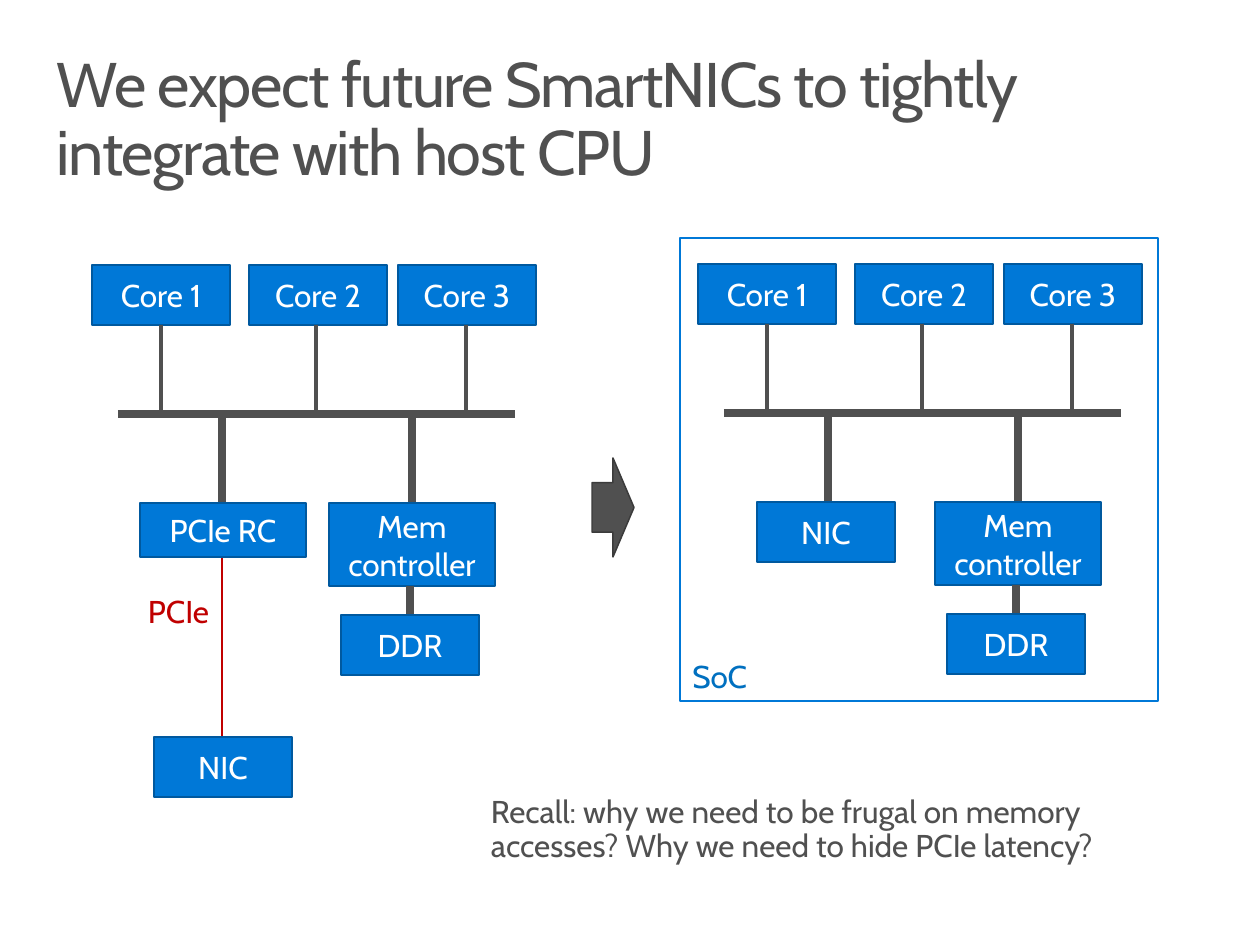
from pptx import Presentation
from pptx.dml.color import RGBColor
from pptx.enum.shapes import MSO_CONNECTOR, MSO_SHAPE
from pptx.enum.text import MSO_ANCHOR, PP_ALIGN
from pptx.oxml.ns import qn
from pptx.util import Emu, Pt

RECTANGLE = MSO_SHAPE.RECTANGLE
RIGHT_ARROW = MSO_SHAPE.RIGHT_ARROW
STRAIGHT = MSO_CONNECTOR.STRAIGHT
TOP, MIDDLE, BOTTOM = MSO_ANCHOR.TOP, MSO_ANCHOR.MIDDLE, MSO_ANCHOR.BOTTOM
LEFT, CENTER = PP_ALIGN.LEFT, PP_ALIGN.CENTER

EMU_PER_PX = 914400 / 126
FONT = "Cabin"
COLORS = {
    "gray": "505050",
    "dark gray": "3B3B3B",
    "blue": "0078D7",
    "dark blue": "00599F",
    "label blue": "0070C0",
    "red": "C00000",
    "white": "FFFFFF",
}

CORE_TOP = 265
BUS_Y = 414
CONTROLLER_TOP = 503
BLOCK_WIDTH, BLOCK_HEIGHT = 138, 60
CONTROLLER_WIDTH = 166
CORES = [("Core 1", 92, 161), ("Core 2", 249, 316), ("Core 3", 398, 466)]
THIN, THICK = 2.25, 4.5
SOC_SHIFT = (606, -1)


def px(length):
    return Emu(round(length * EMU_PER_PX))


def color(name):
    return RGBColor.from_string(COLORS[name])


def write(shape, text, color_name, size=18, align=LEFT, anchor=TOP):
    frame = shape.text_frame
    frame.word_wrap = True
    frame.vertical_anchor = anchor
    frame.text = text
    paragraph = frame.paragraphs[0]
    paragraph.alignment = align
    font = paragraph.runs[0].font
    font.name = FONT
    font.size = Pt(size)
    font.color.rgb = color(color_name)
    return paragraph


def add_text(slide, box, text, color_name, size=18, inset=(13, 6)):
    text_box = slide.shapes.add_textbox(*map(px, box))
    frame = text_box.text_frame
    frame.margin_left = frame.margin_right = px(inset[0])
    frame.margin_top = frame.margin_bottom = px(inset[1])
    return write(text_box, text, color_name, size)


def add_figure(slide, kind, box, fill, line):
    shape = slide.shapes.add_shape(kind, *map(px, box))
    shape.shadow.inherit = False
    if fill:
        shape.fill.solid()
        shape.fill.fore_color.rgb = color(fill)
    else:
        shape.fill.background()
    shape.line.color.rgb = color(line)
    shape.line.width = Pt(0.85)
    return shape


def add_block(slide, text, left, top, width=BLOCK_WIDTH, height=BLOCK_HEIGHT):
    block = add_figure(slide, RECTANGLE, (left, top, width, height), "blue", "dark blue")
    write(block, text, "white", align=CENTER, anchor=MIDDLE)


def add_line(slide, start, end, width, color_name="gray"):
    line = slide.shapes.add_connector(STRAIGHT, *map(px, start + end))
    line.line.color.rgb = color(color_name)
    line.line.width = Pt(width)
    properties = line._element.spPr
    properties.append(properties.makeelement(qn("a:effectLst"), {}))


def add_host(slide, shift_x=0, shift_y=0):
    """Draw the cores, bus and memory that both designs share."""
    def block(text, left, top, *size):
        add_block(slide, text, left + shift_x, top + shift_y, *size)

    def vertical(x, top, bottom, width):
        add_line(slide, (x + shift_x, top + shift_y), (x + shift_x, bottom + shift_y), width)

    for name, left, wire_x in CORES:
        block(name, left, CORE_TOP)
        vertical(wire_x, CORE_TOP + BLOCK_HEIGHT, BUS_Y, THIN)
    add_line(slide, (118 + shift_x, BUS_Y + shift_y), (515 + shift_x, BUS_Y + shift_y), THICK)
    for wire_x in (222, 412):
        vertical(wire_x, BUS_Y, CONTROLLER_TOP, THICK)
    block("Mem controller", 329, CONTROLLER_TOP, CONTROLLER_WIDTH, 83)
    vertical(410, 586, 615, THICK)
    block("DDR", 341, 615)


def add_discrete_design(slide):
    add_host(slide)
    add_line(slide, (222, 557), (222, 737), 1, "red")
    add_block(slide, "PCIe RC", 140, CONTROLLER_TOP, CONTROLLER_WIDTH, 54)
    add_block(slide, "NIC", 154, 737)
    add_text(slide, (135, 586, 125, 50), "PCIe", "red")


def add_soc_design(slide):
    add_host(slide, *SOC_SHIFT)
    add_block(slide, "NIC", 757, CONTROLLER_TOP + SOC_SHIFT[1])
    boundary = add_figure(slide, RECTANGLE, (680, 238, 478, 463), None, "blue")
    write(boundary, "SoC", "label blue", anchor=BOTTOM)


def main():
    presentation = Presentation()
    presentation.slide_width, presentation.slide_height = px(1260), px(945)
    slide = presentation.slides.add_slide(presentation.slide_layouts[6])

    title = add_text(slide, (37, 40, 1186, 123),
                     "We expect future SmartNICs to tightly integrate with host CPU",
                     "gray", 36, (20, 13))
    title.line_spacing = 0.9
    title.runs[0].font._element.set("spc", "-80")

    add_discrete_design(slide)
    add_figure(slide, RIGHT_ARROW, (592, 458, 42, 99), "gray", "dark gray")
    add_soc_design(slide)

    question = add_text(slide, (466, 776, 690, 110),
                        "Recall: why we need to be frugal on memory accesses? "
                        "Why we need to hide PCIe latency?",
                        "gray", inset=(25, 20))
    question.line_spacing = 0.9
    question.space_after = Pt(6)

    presentation.save("out.pptx")


if __name__ == "__main__":
    main()
